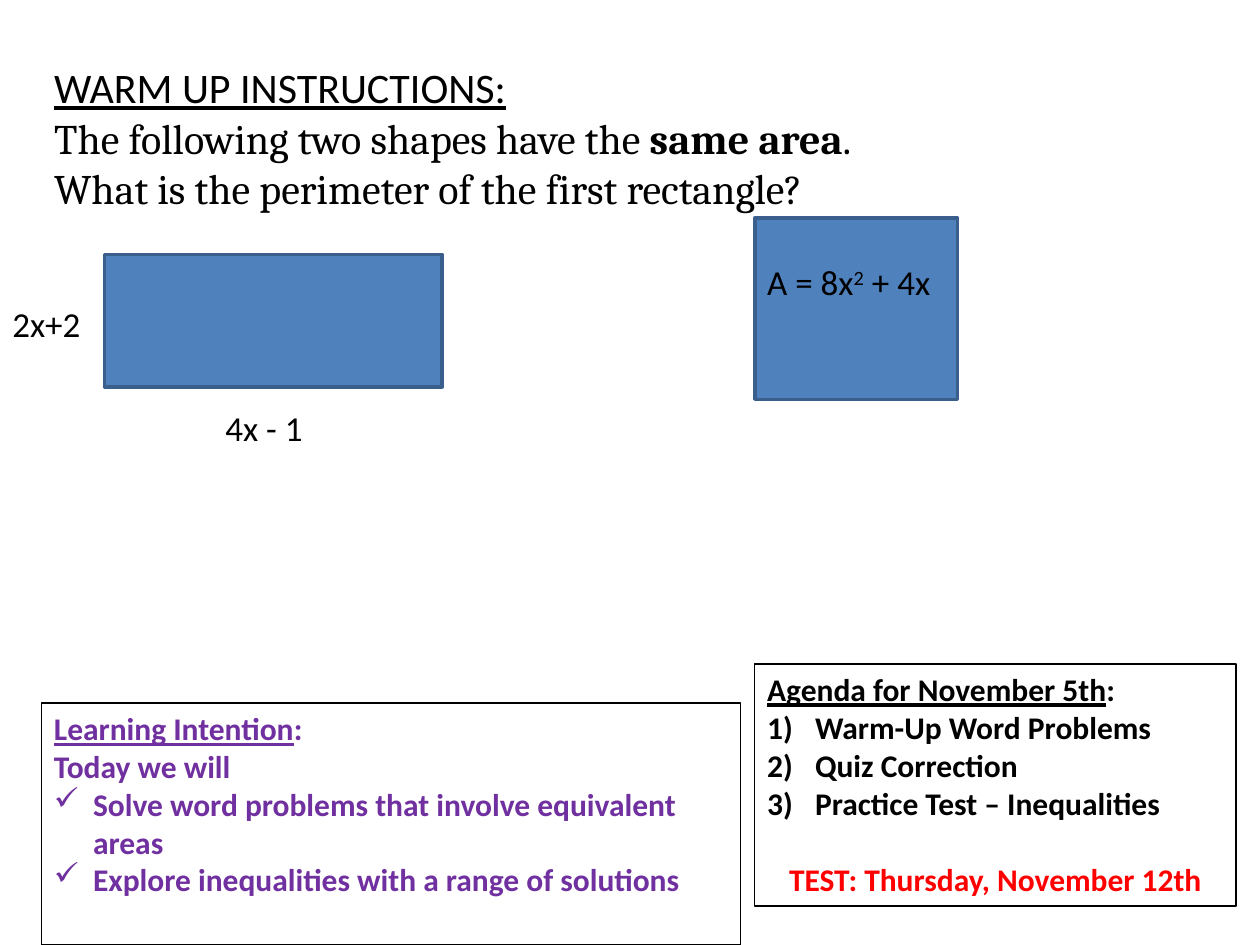
from dataclasses import dataclass

from lxml.etree import SubElement
from pptx import Presentation
from pptx.dml.color import RGBColor
from pptx.enum.shapes import MSO_SHAPE
from pptx.enum.text import MSO_ANCHOR, MSO_AUTO_SIZE, PP_ALIGN
from pptx.oxml.ns import qn
from pptx.util import Inches, Pt


@dataclass(frozen=True)
class Theme:
    black: RGBColor = RGBColor(0x00, 0x00, 0x00)
    purple: RGBColor = RGBColor(0x70, 0x30, 0xA0)
    red: RGBColor = RGBColor(0xFF, 0x00, 0x00)
    fill: RGBColor = RGBColor(0x4F, 0x81, 0xBD)
    edge: RGBColor = RGBColor(0x3A, 0x5F, 0x8C)
    sans: str = "Calibri"
    serif: str = "Cambria"
    heading: int = 24
    label: int = 20
    note: int = 18


THEME = Theme()
LEFT, RIGHT = 0.33, 5.99  # left edges of the two columns
RIGHT_EDGE = 9.81
NOTE_HEIGHT, LABEL_HEIGHT = 1.92, 0.44

# A paragraph is (spans, options); a span is (text, style).
UNDERLINED, BOLD, SUPERSCRIPT = {"underline": True}, {"bold": True}, {"raised": True}
SERIF = {"font": THEME.serif}
CHECK = {"bullet": "✓", "indent": 0.31}
NUMBER = {"bullet": "number", "indent": 0.38}

INSTRUCTIONS = [
    ([("WARM UP INSTRUCTIONS:", UNDERLINED)], {}),
    ([("The following two shapes have the ", SERIF),
      ("same area", SERIF | BOLD), (".", SERIF)], {}),
    ([("What is the perimeter of the first rectangle?", SERIF)], {}),
]
INTENTION = [
    ([("Learning Intention", UNDERLINED), (":", {})], {}),
    ([("Today we will", {})], {}),
    ([("Solve word problems that involve equivalent areas", {})], CHECK),
    ([("Explore inequalities with a range of solutions", {})], CHECK),
]
AGENDA = [
    ([("Agenda for November 5th", UNDERLINED), (":", {})], {}),
    ([("Warm-Up Word Problems", {})], NUMBER),
    ([("Quiz Correction", {})], NUMBER),
    ([("Practice Test – Inequalities", {})], NUMBER),
    ([("TEST: Thursday, November 12th", {"color": THEME.red})],
     {"align": PP_ALIGN.CENTER, "before": 22}),
]
NOTES = [
    ((LEFT, 5.58, 5.55, NOTE_HEIGHT), INTENTION, THEME.purple),
    ((RIGHT, 5.27, RIGHT_EDGE - RIGHT, NOTE_HEIGHT), AGENDA, THEME.black),
]
RECTANGLES = [(0.83, 2.02, 2.68, 1.05), (RIGHT, 1.73, 1.61, 1.44)]
LABELS = [
    ((1.69, 3.18, 1.81, LABEL_HEIGHT), [("4x - 1", {})]),
    ((0, 2.35, 0.83, LABEL_HEIGHT), [("2x+2", {})]),
    ((RIGHT, 2.02, 1.72, LABEL_HEIGHT),
     [("A = 8x", {}), ("2", SUPERSCRIPT), (" + 4x", {})]),
]


def add_bullet(para, mark, indent):
    properties = para._p.get_or_add_pPr()
    properties.set("marL", str(Inches(indent)))
    properties.set("indent", str(-Inches(indent)))
    if mark == "number":
        SubElement(properties, qn("a:buAutoNum"), type="arabicParenR")
    else:
        SubElement(properties, qn("a:buChar"), char=mark)


def write(box, paragraphs, size, color=THEME.black, bold=False):
    frame = box.text_frame
    frame.word_wrap = True
    frame.auto_size = MSO_AUTO_SIZE.NONE
    frame.vertical_anchor = MSO_ANCHOR.TOP
    for index, (spans, options) in enumerate(paragraphs):
        para = frame.add_paragraph() if index else frame.paragraphs[0]
        para.alignment = options.get("align", PP_ALIGN.LEFT)
        para.space_before = Pt(options.get("before", 0))
        if "bullet" in options:
            add_bullet(para, options["bullet"], options["indent"])
        for text, style in spans:
            span = para.add_run()
            span.text = text
            span.font.name = style.get("font", THEME.sans)
            span.font.size = Pt(size)
            span.font.bold = style.get("bold", bold)
            span.font.underline = style.get("underline", False)
            span.font.color.rgb = style.get("color", color)
            if style.get("raised"):
                span._r.get_or_add_rPr().set("baseline", "30000")


def add_rectangle(slide, place, line_color, line_width, fill=None):
    box = slide.shapes.add_shape(MSO_SHAPE.RECTANGLE, *map(Inches, place))
    box.shadow.inherit = False
    box.line.color.rgb = line_color
    box.line.width = Pt(line_width)
    if fill is None:
        box.fill.background()
    else:
        box.fill.solid()
        box.fill.fore_color.rgb = fill
    return box


def main():
    deck = Presentation()
    deck.slide_width, deck.slide_height = Inches(10), Inches(7.5)
    slide = deck.slides.add_slide(deck.slide_layouts[5])

    title = slide.shapes.title
    title.left, title.top, title.width, title.height = map(
        Inches, (LEFT, 0.44, RIGHT_EDGE - LEFT, 4.44))
    write(title, INSTRUCTIONS, THEME.heading)

    for place, paragraphs, color in NOTES:
        note = add_rectangle(slide, place, THEME.black, 0.75)
        write(note, paragraphs, THEME.note, color, bold=True)
    for place in RECTANGLES:
        add_rectangle(slide, place, THEME.edge, 2, THEME.fill)
    for place, spans in LABELS:
        label = slide.shapes.add_textbox(*map(Inches, place))
        write(label, [(spans, {})], THEME.label)

    deck.save("out.pptx")


if __name__ == "__main__":
    main()
